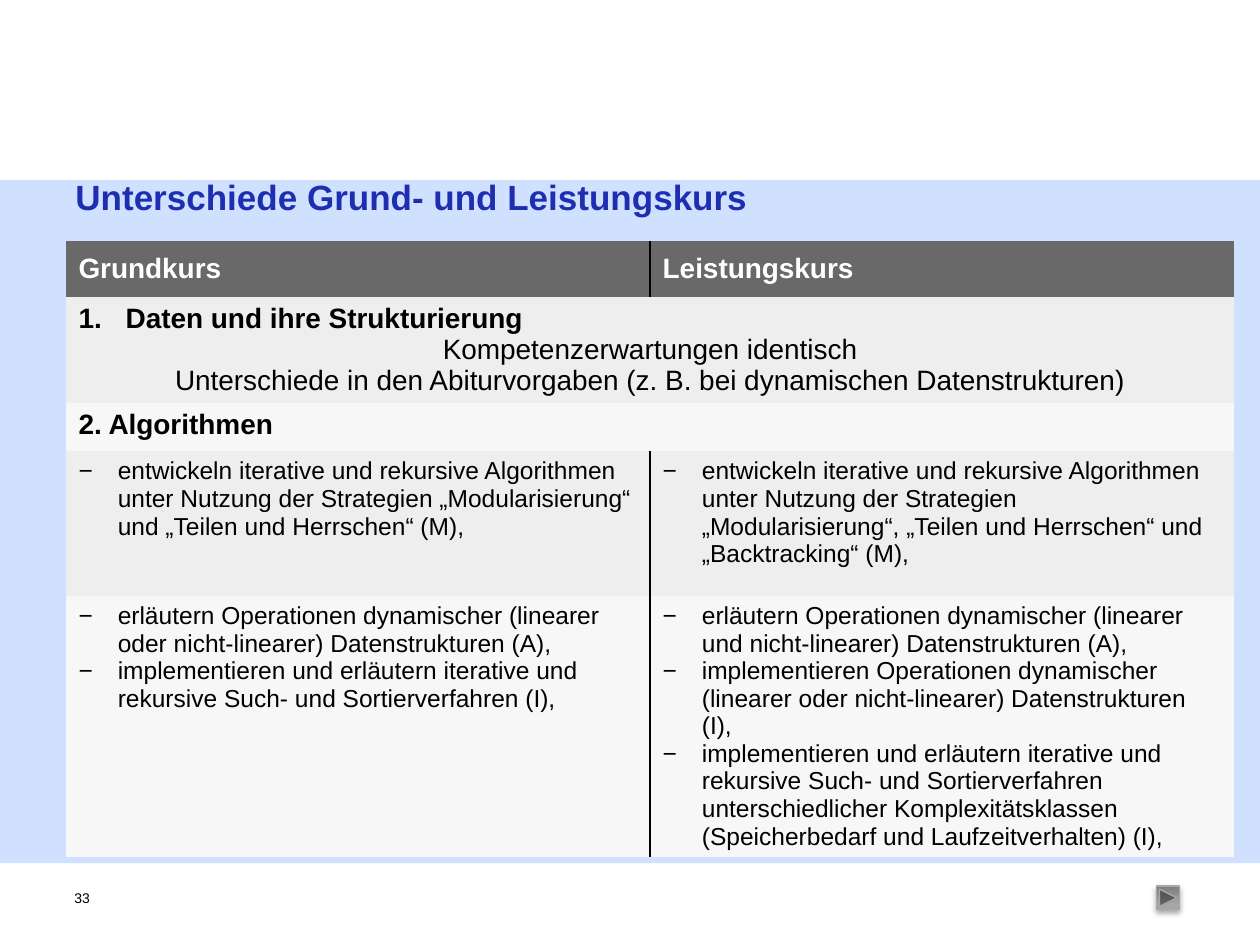
from lxml import etree
from pptx import Presentation
from pptx.dml.color import RGBColor
from pptx.enum.shapes import MSO_SHAPE
from pptx.enum.text import MSO_ANCHOR, MSO_AUTO_SIZE, PP_ALIGN
from pptx.oxml.ns import qn
from pptx.util import Cm, Pt

RECTANGLE = MSO_SHAPE.RECTANGLE
NEXT_BUTTON = MSO_SHAPE.ACTION_BUTTON_FORWARD_OR_NEXT
TOP, MIDDLE = MSO_ANCHOR.TOP, MSO_ANCHOR.MIDDLE
NO_AUTOFIT = MSO_AUTO_SIZE.NONE
LEFT, CENTER = PP_ALIGN.LEFT, PP_ALIGN.CENTER

BLACK = RGBColor(0x00, 0x00, 0x00)
WHITE = RGBColor(0xFF, 0xFF, 0xFF)
NAVY = RGBColor(0x00, 0x00, 0x90)
BAND_BLUE = RGBColor(0x66, 0x99, 0xFF)
HEADER_GREY = RGBColor(0x69, 0x69, 0x69)
ROW_GREY = RGBColor(0xEE, 0xEE, 0xEE)
ROW_LIGHT = RGBColor(0xF7, 0xF7, 0xF7)
BUTTON_DARK = RGBColor(0x7E, 0x7E, 0x7E)
BUTTON_LIGHT = RGBColor(0xA6, 0xA6, 0xA6)
BUTTON_LINE = RGBColor(0xA8, 0xA8, 0xA8)

FONT = "Arial"
PLAIN_TABLE_STYLE = "{2D5ABB26-0587-4C30-8999-92F81FD0307C}"
ROW_HEIGHTS = (1.13, 2.14, 0.97, 2.92, 5.26)
DATA_LINES = (
    "Kompetenzerwartungen identisch",
    "Unterschiede in den Abiturvorgaben (z. B. bei dynamischen Datenstrukturen)",
)
SKILL_ROWS = (
    (
        ("entwickeln iterative und rekursive Algorithmen unter Nutzung der Strategien "
         "„Modularisierung“ und „Teilen und Herrschen“ (M),",),
        ("entwickeln iterative und rekursive Algorithmen unter Nutzung der Strategien "
         "„Modularisierung“, „Teilen und Herrschen“ und „Backtracking“ (M),",),
    ),
    (
        ("erläutern Operationen dynamischer (linearer oder nicht-linearer) "
         "Datenstrukturen (A),",
         "implementieren und erläutern iterative und rekursive Such- und "
         "Sortierverfahren (I),"),
        ("erläutern Operationen dynamischer (linearer und nicht-linearer) "
         "Datenstrukturen (A),",
         "implementieren Operationen dynamischer (linearer oder nicht-linearer) "
         "Datenstrukturen (I),",
         "implementieren und erläutern iterative und rekursive Such- und "
         "Sortierverfahren unterschiedlicher Komplexitätsklassen "
         "(Speicherbedarf und Laufzeitverhalten) (I),"),
    ),
)


def add_child(parent, tag, **attributes):
    """Append a DrawingML element with the given attributes."""
    child = etree.SubElement(parent, qn(tag))
    for name, value in attributes.items():
        child.set(name, str(value))
    return child


def write(frame, text, size=16, color=BLACK, bold=False, align=LEFT,
          indent=0, bullet=None, numbering=None):
    """Write one paragraph, filling the empty first one before adding more."""
    first = frame.paragraphs[0]
    para = frame.add_paragraph() if first.runs else first
    para.alignment = align
    para.space_before = Pt(0)
    properties = para._p.get_or_add_pPr()
    if indent:
        properties.set("marL", str(Cm(indent)))
        properties.set("indent", str(-Cm(indent)))
    if bullet:
        add_child(properties, "a:buFont", typeface=FONT)
        add_child(properties, "a:buChar", char=bullet)
    if numbering:
        add_child(properties, "a:buFont", typeface=FONT)
        add_child(properties, "a:buAutoNum", type=numbering)
    span = para.add_run()
    span.text = text
    span.font.name = FONT
    span.font.size = Pt(size)
    span.font.bold = bold
    span.font.color.rgb = color


def prepare_frame(frame):
    """Give a text frame no margins, wrapping and a top anchor."""
    frame.margin_left = frame.margin_right = 0
    frame.margin_top = frame.margin_bottom = 0
    frame.word_wrap = True
    frame.auto_size = NO_AUTOFIT
    frame.vertical_anchor = TOP


def add_band(page, left, top, width, height):
    """Draw the translucent blue band behind the content."""
    band = page.shapes.add_shape(RECTANGLE, left, top, width, height)
    band.shadow.inherit = False
    band.fill.solid()
    band.fill.fore_color.rgb = BAND_BLUE
    band.line.fill.background()
    add_child(band._element.spPr.find(".//" + qn("a:srgbClr")), "a:alpha", val=30000)


def add_title(page, left, top, width, height):
    """Place and format the title placeholder."""
    title = page.shapes.title
    title.left, title.top, title.width, title.height = left, top, width, height
    prepare_frame(title.text_frame)
    write(title.text_frame, "Unterschiede Grund- und Leistungskurs",
          size=20, color=NAVY, bold=True)


def add_page_number(page, left, top, width, height):
    """Place the page number."""
    box = page.shapes.add_textbox(left, top, width, height)
    prepare_frame(box.text_frame)
    write(box.text_frame, "33", size=8)


def add_border(cell, tag):
    """Draw a thin black line on one side of a cell."""
    line = etree.Element(qn(tag), w=str(Pt(1)))
    add_child(add_child(line, "a:solidFill"), "a:srgbClr", val=BLACK)
    cell._tc.get_or_add_tcPr().insert(0, line)


def add_course_table(page, left, top, width, height):
    """Build the table that compares the two courses."""
    table = page.shapes.add_table(len(ROW_HEIGHTS), 2, left, top, width, height).table
    table.horz_banding = False
    table._tbl.tblPr.find(qn("a:tableStyleId")).text = PLAIN_TABLE_STYLE
    fills = (HEADER_GREY, ROW_GREY, ROW_LIGHT, ROW_GREY, ROW_LIGHT)
    for index, (row_height, color) in enumerate(zip(ROW_HEIGHTS, fills)):
        table.rows[index].height = Cm(row_height)
        for cell in table.rows[index].cells:
            cell.fill.solid()
            cell.fill.fore_color.rgb = color

    for column, heading in enumerate(("Grundkurs", "Leistungskurs")):
        cell = table.cell(0, column)
        cell.vertical_anchor = MIDDLE
        write(cell.text_frame, heading, color=WHITE, bold=True)

    for row in (1, 2):
        table.cell(row, 0).merge(table.cell(row, 1))
    data = table.cell(1, 0).text_frame
    write(data, "Daten und ihre Strukturierung", bold=True,
          indent=0.95, numbering="arabicPeriod")
    for line in DATA_LINES:
        write(data, line, align=CENTER, indent=0.95)
    write(table.cell(2, 0).text_frame, "2. Algorithmen", bold=True)

    for row, courses in enumerate(SKILL_ROWS, start=3):
        for column, skills in enumerate(courses):
            for skill in skills:
                write(table.cell(row, column).text_frame, skill,
                      size=14, indent=0.79, bullet="−")
    for row in (0, 3, 4):
        add_border(table.cell(row, 0), "a:lnR")
        add_border(table.cell(row, 1), "a:lnL")


def add_next_button(page, left, top, width, height):
    """Draw the grey forward button with its soft shadow."""
    button = page.shapes.add_shape(NEXT_BUTTON, left, top, width, height)
    button.shadow.inherit = False
    button.fill.gradient()
    button.fill.gradient_angle = 90
    stops = zip(button.fill.gradient_stops, (0, 0.8), (BUTTON_DARK, BUTTON_LIGHT))
    for stop, position, color in stops:
        stop.position = position
        stop.color.rgb = color
    button.line.color.rgb = BUTTON_LINE
    button.line.width = Pt(0.75)
    properties = button._element.spPr
    properties.find(qn("a:xfrm")).set("flipV", "1")
    shadow = add_child(properties.find(qn("a:effectLst")), "a:outerShdw",
                       blurRad=Pt(3.1), dist=Pt(1.8), dir=5400000, rotWithShape=0)
    add_child(add_child(shadow, "a:srgbClr", val=BLACK), "a:alpha", val=35000)


def main():
    """Build the slide and save the deck."""
    deck = Presentation()
    deck.slide_width, deck.slide_height = Cm(25.4), Cm(19.05)
    page = deck.slides.add_slide(deck.slide_layouts[5])
    add_band(page, 0, Cm(3.63), deck.slide_width, Cm(13.77))
    add_page_number(page, Cm(1.5), Cm(17.93), Cm(0.81), Cm(0.94))
    add_course_table(page, Cm(1.33), Cm(4.86), Cm(23.55), Cm(sum(ROW_HEIGHTS)))
    add_title(page, Cm(1.52), Cm(3.53), Cm(23.88), Cm(1.3))
    add_next_button(page, Cm(23.32), Cm(17.86), Cm(0.46), Cm(0.48))
    deck.save("out.pptx")


if __name__ == "__main__":
    main()
